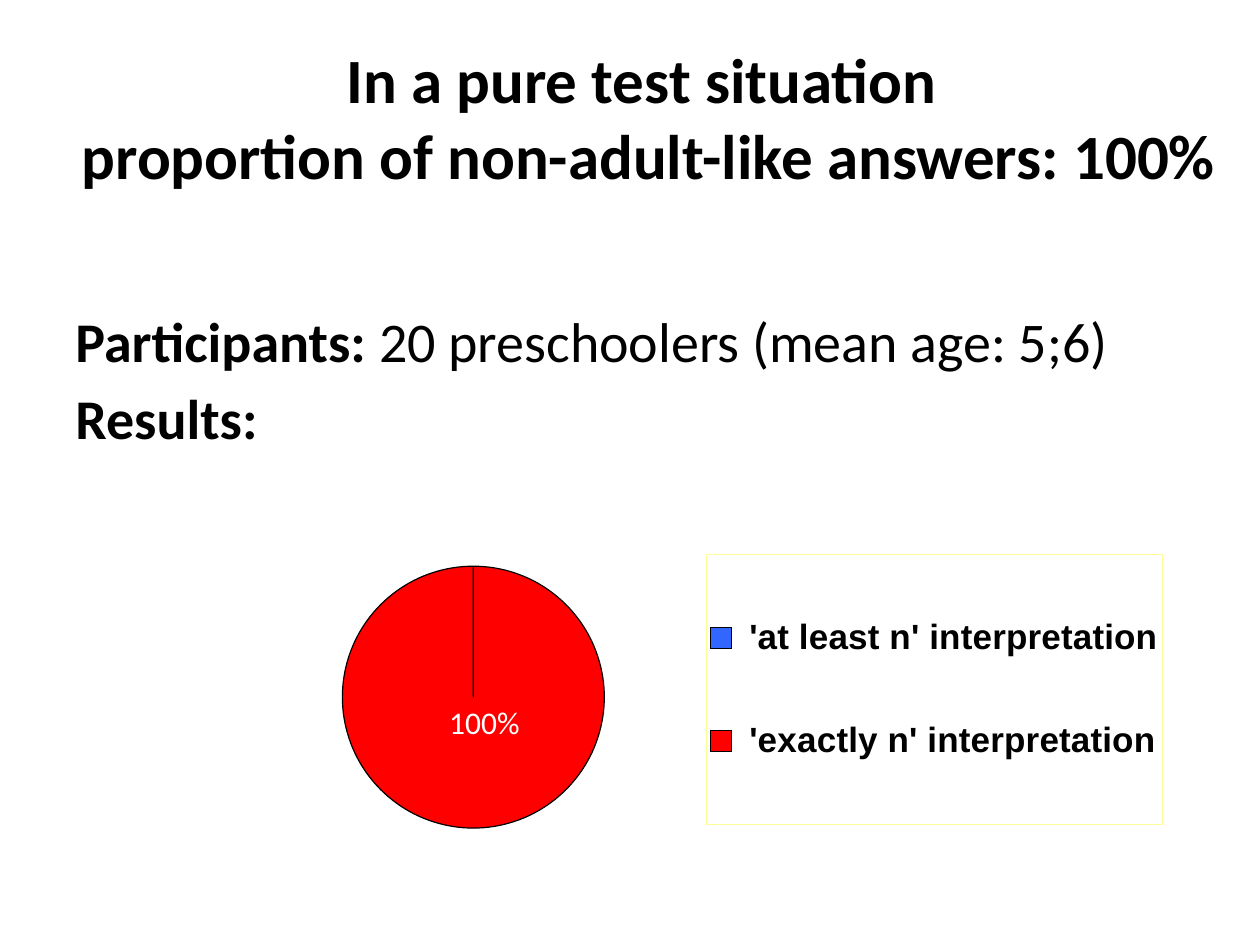
"""Build the slide on non-adult-like answers in a pure test situation."""
import pptx
import pptx.chart.data
import pptx.dml.color
import pptx.enum.chart
import pptx.enum.text
import pptx.oxml
import pptx.util
from pptx.util import Inches, Pt

TITLE = "In a pure test situation \vproportion of non-adult-like answers: 100%"
BODY = [
    [("Participants: ", True), ("20 preschoolers (mean age: 5;6)", False)],
    [("Results:", True)],
]
ANSWERS = [
    (" 'at least n' interpretation", 0, "3366FF"),
    (" 'exactly n' interpretation", 1, "FF0000"),
]
PLOT_LAYOUT = {"x": 0.06, "y": 0.16, "w": 0.58, "h": 0.66}
LEGEND_LAYOUT = {"x": 0.56, "y": 0.13, "w": 0.41, "h": 0.68}
LABEL_LAYOUT = {"x": 0.01, "y": -0.1}
CHART_NS = 'xmlns:c="http://schemas.openxmlformats.org/drawingml/2006/chart"'
LEGEND_BORDER = (
    f'<c:spPr {CHART_NS} '
    'xmlns:a="http://schemas.openxmlformats.org/drawingml/2006/main"><a:noFill/>'
    '<a:ln w="3175"><a:solidFill><a:srgbClr val="FFFF99"/></a:solidFill></a:ln></c:spPr>'
)


def color(value):
    return pptx.dml.color.RGBColor.from_string(value)


def style(font, size, name="Calibri", fill="000000", bold=False):
    font.size, font.name, font.bold = Pt(size), name, bold
    font.color.rgb = color(fill)


def add_text_box(page, left, top, width, height):
    box = page.shapes.add_textbox(Inches(left), Inches(top), Inches(width), Inches(height))
    box.text_frame.word_wrap = True
    return box.text_frame


def layout(places, inner=False):
    target = '<c:layoutTarget val="inner"/>' if inner else ""
    modes = "".join(f'<c:{axis}Mode val="edge"/>' for axis in "xy") if "w" in places else ""
    values = "".join(f'<c:{key} val="{value}"/>' for key, value in places.items())
    return pptx.oxml.parse_xml(
        f"<c:layout {CHART_NS}><c:manualLayout>{target}{modes}{values}"
        "</c:manualLayout></c:layout>"
    )


def place(element, places, before, inner=False):
    for old in element.findall("{*}layout"):
        element.remove(old)
    element.find("{*}" + before).addprevious(layout(places, inner))


def add_title(page):
    frame = add_text_box(page, 0.5, 0.3, 9.3, 1.25)
    frame.vertical_anchor = pptx.enum.text.MSO_ANCHOR.MIDDLE
    para = frame.paragraphs[0]
    para.text = TITLE
    para.alignment = pptx.enum.text.PP_ALIGN.CENTER
    style(para.font, 36, bold=True)


def add_body(page):
    frame = add_text_box(page, 0.5, 1.75, 9, 5.46)
    frame.margin_top = Inches(0.68)
    for index, spans in enumerate(BODY):
        para = frame.add_paragraph() if index else frame.paragraphs[0]
        para.space_after = Pt(5.6)
        for text, bold in spans:
            span = para.add_run()
            span.text = text
            style(span.font, 32, bold=bold)


def add_pie(page):
    data = pptx.chart.data.CategoryChartData(number_format="0%")
    data.categories = [name for name, share, fill in ANSWERS]
    data.add_series("Series 1", [share * 100 for name, share, fill in ANSWERS])
    chart = page.shapes.add_chart(
        pptx.enum.chart.XL_CHART_TYPE.PIE,
        Inches(0.67), Inches(3.99), Inches(8.82), Inches(3.15), data,
    ).chart
    chart.has_title = False
    style(chart.font, 12.4)

    chart.has_legend = True
    legend = chart.legend
    legend.position = pptx.enum.chart.XL_LEGEND_POSITION.RIGHT
    legend.include_in_layout = False
    style(legend.font, 20, name="Arial", bold=True)
    place(legend._element, LEGEND_LAYOUT, "overlay")
    legend._element.find("{*}txPr").addprevious(pptx.oxml.parse_xml(LEGEND_BORDER))

    plot = chart.plots[0]
    plot.vary_by_categories = True
    place(plot._element.getparent(), PLOT_LAYOUT, "pieChart", inner=True)
    series = plot.series[0]
    for index, (name, share, fill) in enumerate(ANSWERS):
        look = series.points[index].format
        look.fill.solid()
        look.fill.fore_color.rgb = color(fill)
        look.line.color.rgb = color("000000")
        look.line.width = Pt(0.69)

    labels = series.data_labels
    labels.show_percentage, labels.show_value = True, False
    labels.number_format, labels.number_format_is_linked = "0%", False
    labels.position = pptx.enum.chart.XL_LABEL_POSITION.CENTER
    style(labels.font, 18, fill="FFFFFF")
    labels._element.insert(0, pptx.oxml.parse_xml(
        f'<c:dLbl {CHART_NS}><c:idx val="0"/><c:delete val="1"/></c:dLbl>'
    ))
    label = series.points[1].data_label
    style(label.font, 18, fill="FFFFFF")
    label.position = pptx.enum.chart.XL_LABEL_POSITION.CENTER
    label_xml = labels._element.findall("{*}dLbl")[1]
    label_xml.find("{*}idx").addnext(layout(LABEL_LAYOUT))
    for tag, shown in (("showVal", "0"), ("showPercent", "1")):
        label_xml.find("{*}" + tag).set("val", shown)


def main():
    deck = pptx.Presentation()
    deck.slide_width, deck.slide_height = Inches(10), Inches(7.5)
    page = deck.slides.add_slide(deck.slide_layouts[6])
    add_title(page)
    add_body(page)
    add_pie(page)
    deck.save("out.pptx")


if __name__ == "__main__":
    main()
